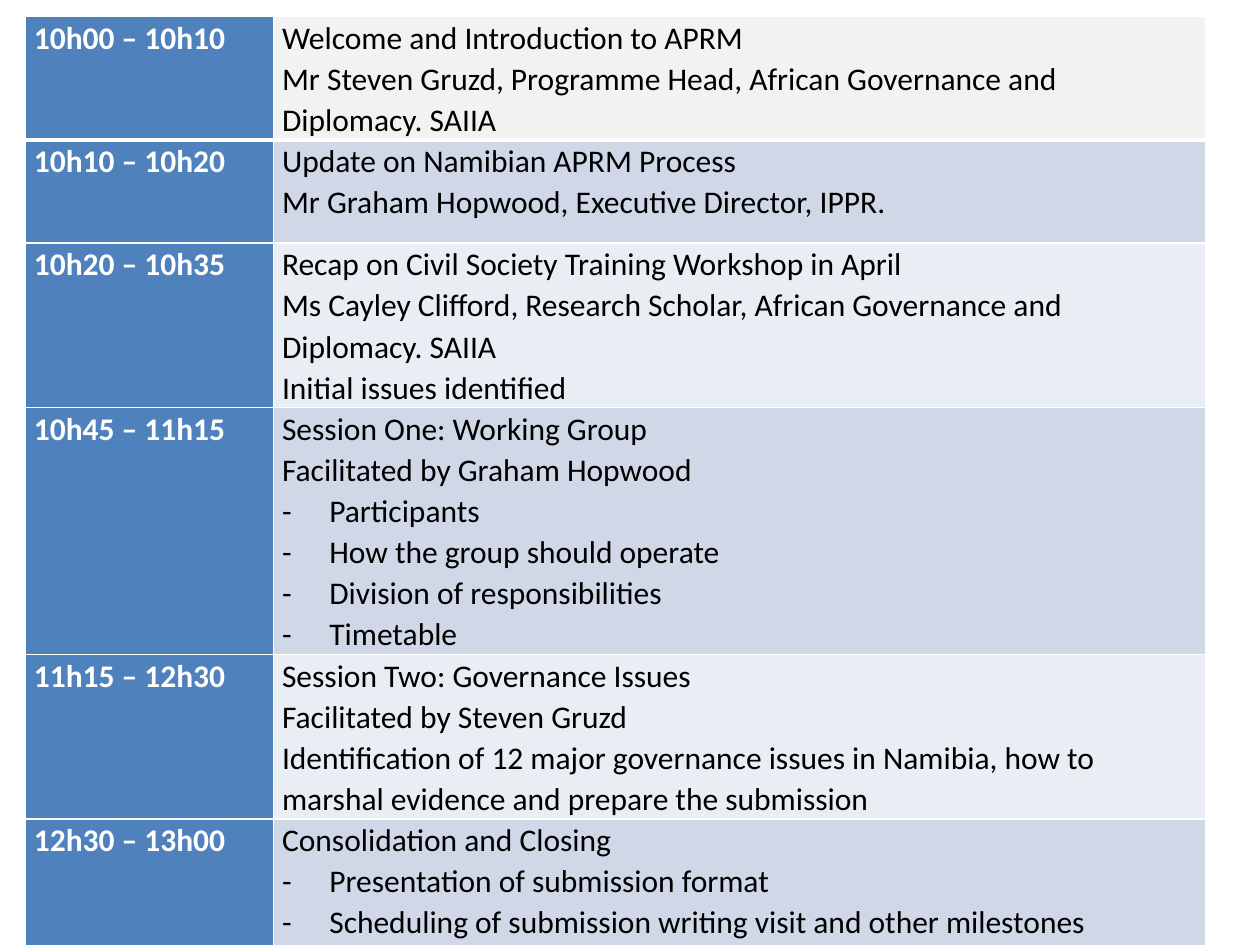
"""Build a workshop agenda slide with one timetable."""
from dataclasses import dataclass

from lxml.etree import SubElement
from pptx import Presentation
from pptx.dml.color import RGBColor
from pptx.oxml import parse_xml
from pptx.oxml.ns import nsdecls, qn
from pptx.util import Pt

WHITE = RGBColor(0xFF, 0xFF, 0xFF)
BLACK = RGBColor(0x00, 0x00, 0x00)
BLUE = RGBColor(0x4F, 0x81, 0xBD)
GREY = RGBColor(0xF2, 0xF2, 0xF2)
BAND_DARK = RGBColor(0xD0, 0xD8, 0xE8)
BAND_LIGHT = RGBColor(0xE9, 0xED, 0xF4)

COLUMN_WIDTHS = (141.8, 532.8)
BULLET_INDENT = Pt(27)


@dataclass
class Session:
    time: str
    lines: tuple[str, ...]
    height: float
    fill: RGBColor
    bullets: tuple[str, ...] = ()


SESSIONS = (
    Session("10h00 – 10h10", (
        "Welcome and Introduction to APRM",
        "Mr Steven Gruzd, Programme Head, African Governance and Diplomacy. SAIIA",
    ), 66.2, GREY),
    Session("10h10 – 10h20", (
        "Update on Namibian APRM Process",
        "Mr Graham Hopwood, Executive Director, IPPR.",
    ), 59, BAND_DARK),
    Session("10h20 – 10h35", (
        "Recap on Civil Society Training Workshop in April",
        "Ms Cayley Clifford, Research Scholar, African Governance and Diplomacy. SAIIA",
        "Initial issues identified",
    ), 89.3, BAND_LIGHT),
    Session("10h45 – 11h15", (
        "Session One: Working Group",
        "Facilitated by Graham Hopwood",
    ), 133.9, BAND_DARK, (
        "Participants",
        "How the group should operate",
        "Division of responsibilities",
        "Timetable",
    )),
    Session("11h15 – 12h30", (
        "Session Two: Governance Issues",
        "Facilitated by Steven Gruzd",
        "Identification of 12 major governance issues in Namibia, "
        "how to marshal evidence and prepare the submission",
    ), 89.3, BAND_LIGHT),
    Session("12h30 – 13h00", ("Consolidation and Closing",), 84.2, BAND_DARK, (
        "Presentation of submission format",
        "Scheduling of submission writing visit and other milestones",
    )),
)


def set_borders(cell, top: float, bottom: float) -> None:
    tcPr = cell._tc.get_or_add_tcPr()
    widths = {"lnL": 1, "lnR": 1, "lnT": top, "lnB": bottom}
    for i, (tag, width) in enumerate(widths.items()):
        tcPr.insert(i, parse_xml(
            f'<a:{tag} {nsdecls("a")} w="{Pt(width)}"><a:solidFill>'
            f'<a:srgbClr val="{WHITE}"/></a:solidFill></a:{tag}>'))


def add_dash(p) -> None:
    pPr = p._p.get_or_add_pPr()
    pPr.set("marL", str(BULLET_INDENT))
    pPr.set("indent", str(-BULLET_INDENT))
    SubElement(pPr, qn("a:buFont"), typeface="Calibri")
    SubElement(pPr, qn("a:buChar"), char="-")


def fill_cell(cell, lines: tuple[str, ...], bullets: tuple[str, ...],
              fill: RGBColor, color: RGBColor, bold: bool) -> None:
    cell.fill.solid()
    cell.fill.fore_color.rgb = fill
    cell.margin_left = cell.margin_right = Pt(5)
    cell.margin_top = cell.margin_bottom = Pt(0)
    tf = cell.text_frame
    tf.text = "\n".join(lines + bullets)
    for i, p in enumerate(tf.paragraphs):
        if i >= len(lines):
            add_dash(p)
        p.line_spacing = 1.07
        for r in p.runs:
            r.font.name = "Calibri"
            r.font.size = Pt(18)
            r.font.bold = bold
            r.font.color.rgb = color


def add_agenda(s, sessions: tuple[Session, ...]) -> None:
    table = s.shapes.add_table(
        len(sessions), len(COLUMN_WIDTHS), Pt(14.4), Pt(9.4),
        Pt(sum(COLUMN_WIDTHS)), Pt(sum(x.height for x in sessions))).table
    for column, width in zip(table.columns, COLUMN_WIDTHS):
        column.width = Pt(width)
    for i, session in enumerate(sessions):
        table.rows[i].height = Pt(session.height)
        time_cell, topic_cell = table.cell(i, 0), table.cell(i, 1)
        fill_cell(time_cell, (session.time,), (), BLUE, WHITE, True)
        fill_cell(topic_cell, session.lines, session.bullets,
                  session.fill, BLACK, False)
        for cell in (time_cell, topic_cell):
            set_borders(cell, top=3 if i == 1 else 1, bottom=3 if i == 0 else 1)


def main() -> None:
    prs = Presentation()
    prs.slide_width, prs.slide_height = Pt(720), Pt(540)
    s = prs.slides.add_slide(prs.slide_layouts[6])
    add_agenda(s, SESSIONS)
    prs.save("out.pptx")


if __name__ == "__main__":
    main()
